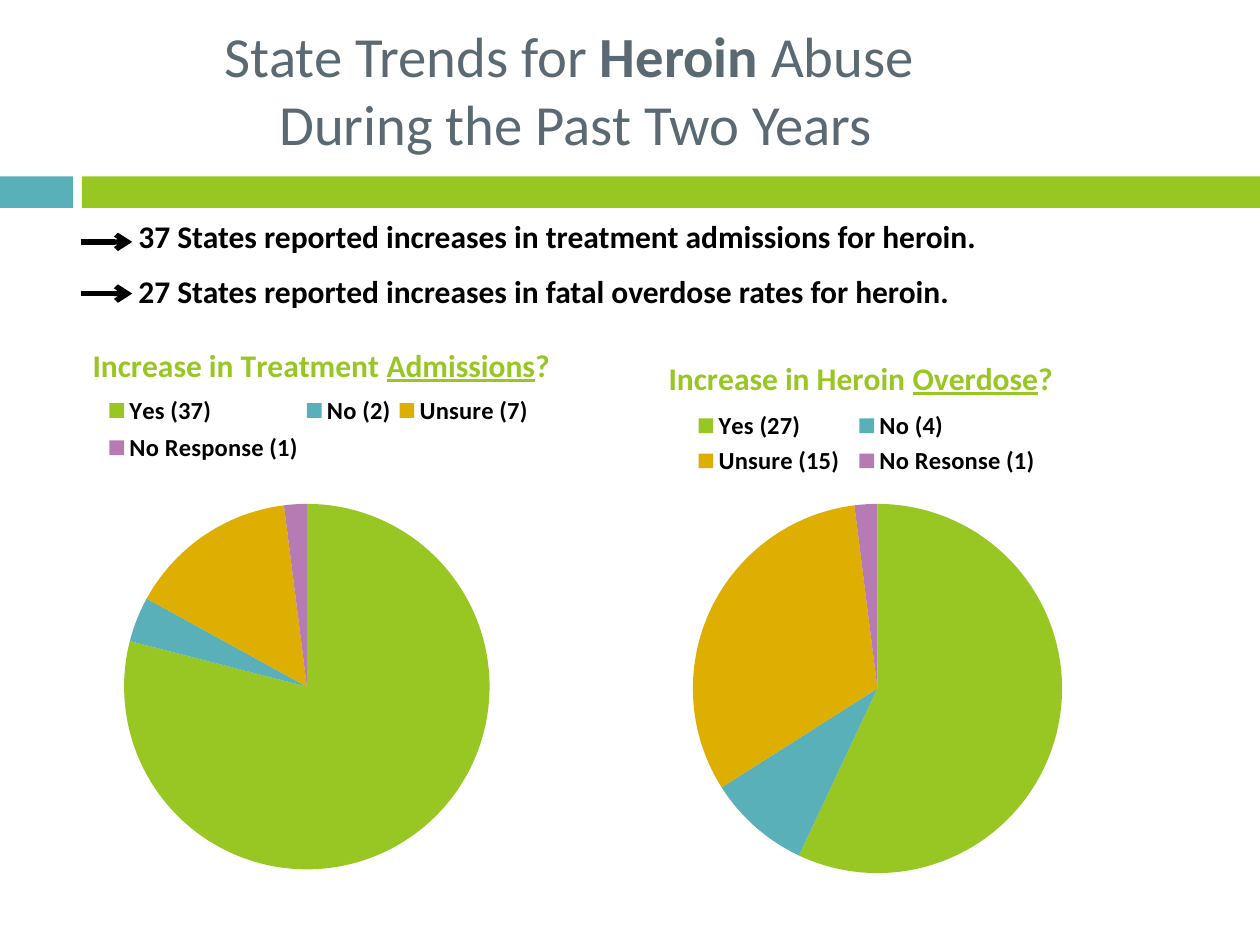
from dataclasses import dataclass

from lxml.etree import SubElement
from pptx import Presentation
from pptx.chart.data import CategoryChartData
from pptx.dml.color import RGBColor
from pptx.enum.chart import XL_CHART_TYPE, XL_LEGEND_POSITION
from pptx.enum.shapes import MSO_CONNECTOR, MSO_SHAPE
from pptx.enum.text import MSO_ANCHOR, MSO_AUTO_SIZE, PP_ALIGN
from pptx.oxml import parse_xml
from pptx.oxml.ns import nsdecls, qn
from pptx.util import Inches, Pt


@dataclass(frozen=True)
class Theme:
    font: str = "Calibri"
    slate: str = "5B6973"
    black: str = "000000"
    green: str = "98C723"
    teal: str = "59B0B9"
    gold: str = "DEAE00"
    purple: str = "B77BB4"
    title: float = 32.4
    body: float = 18
    legend: float = 14
    gap: float = 10
    arrow: float = 3


class SlideBuilder:
    def __init__(self, prs, theme):
        self.theme = theme
        self.s = prs.slides.add_slide(prs.slide_layouts[5])

    def style(self, font, size, color, bold=False, underline=None):
        font.name = self.theme.font
        font.size = Pt(size)
        font.bold = bold
        font.underline = underline
        font.color.rgb = RGBColor.from_string(color)

    def run(self, p, text, size, color, bold=False, underline=None):
        r = p.add_run()
        r.text = text
        self.style(r.font, size, color, bold, underline)

    def title(self, lines, x, y, w, h):
        sp = self.s.shapes.title
        sp.left, sp.top, sp.width, sp.height = map(Inches, (x, y, w, h))
        tf = sp.text_frame
        tf.auto_size = MSO_AUTO_SIZE.NONE
        tf.vertical_anchor = MSO_ANCHOR.MIDDLE
        p = tf.paragraphs[0]
        p.alignment = PP_ALIGN.CENTER
        for i, line in enumerate(lines):
            if i:
                p.add_line_break()
            for text, bold in line:
                self.run(p, text, self.theme.title, self.theme.slate, bold)

    def bar(self, color, x, y, w, h):
        sp = self.s.shapes.add_shape(MSO_SHAPE.RECTANGLE, *map(Inches, (x, y, w, h)))
        sp.shadow.inherit = False
        sp.fill.solid()
        sp.fill.fore_color.rgb = RGBColor.from_string(color)
        sp.line.fill.background()

    def text(self, lines, x, y, w, h):
        tf = self.s.shapes.add_textbox(*map(Inches, (x, y, w, h))).text_frame
        tf.word_wrap = True
        for i, line in enumerate(lines):
            p = tf.add_paragraph() if i else tf.paragraphs[0]
            p.space_before = Pt(self.theme.gap if i else 0)
            self.run(p, line, self.theme.body, self.theme.black, True)

    def arrow(self, x1, x2, y):
        cx = self.s.shapes.add_connector(
            MSO_CONNECTOR.STRAIGHT, Inches(x1), Inches(y), Inches(x2), Inches(y))
        cx.line.width = Pt(self.theme.arrow)
        cx.line.color.rgb = RGBColor.from_string(self.theme.black)
        SubElement(cx.line._get_or_add_ln(), qn("a:tailEnd"), type="arrow")
        SubElement(cx.element.spPr, qn("a:effectLst"))

    def layout(self, parent, index, x, y, w=None, h=None, inner=False):
        for old in parent.findall(qn("c:layout")):
            parent.remove(old)
        target = '<c:layoutTarget val="inner"/>' if inner else ""
        modes = '<c:xMode val="edge"/><c:yMode val="edge"/>'
        sizes = "".join(f'<c:{k} val="{v}"/>' for k, v in zip("xywh", (x, y, w, h))
                        if v is not None)
        parent.insert(index, parse_xml(
            f'<c:layout {nsdecls("c")}><c:manualLayout>{target}{modes}{sizes}'
            "</c:manualLayout></c:layout>"))

    def pie(self, box, topic, key, series, values, title_at, legend_at, plot_at):
        t = self.theme
        data = CategoryChartData()
        data.categories = list(values)
        data.add_series(series, list(values.values()))
        chart = self.s.shapes.add_chart(XL_CHART_TYPE.PIE, *map(Inches, box), data).chart
        self.style(chart.font, t.body, t.black)

        chart.has_title = True
        p = chart.chart_title.text_frame.paragraphs[0]
        for text, underline in ((f"Increase in {topic} ", None), (key, True), ("?", None)):
            self.run(p, text, t.body, t.green, True, underline)
        chart.chart_title.include_in_layout = False

        chart.has_legend = True
        chart.legend.position = XL_LEGEND_POSITION.TOP
        chart.legend.include_in_layout = False
        self.style(chart.legend.font, t.legend, t.black, True)

        plot = chart.plots[0]
        plot.vary_by_categories = True
        for i, color in enumerate((t.green, t.teal, t.gold, t.purple)):
            fill = plot.series[0].points[i].format.fill
            fill.solid()
            fill.fore_color.rgb = RGBColor.from_string(color)

        root = chart._chartSpace.chart
        self.layout(root.find(qn("c:title")), 1, *title_at)
        self.layout(root.find(qn("c:legend")), 1, *legend_at)
        self.layout(root.find(qn("c:plotArea")), 0, *plot_at, inner=True)


def main():
    prs = Presentation()
    prs.slide_width, prs.slide_height = Inches(10), Inches(7.5)
    theme = Theme()
    b = SlideBuilder(prs, theme)

    b.bar(theme.teal, 0, 1.4, 0.58, 0.25)
    b.bar(theme.green, 0.65, 1.4, 9.35, 0.25)
    b.title([[("State Trends for ", False), ("Heroin", True), (" Abuse ", False)],
             [("During the Past Two Years", False)]], 0.07, 0.08, 9, 1.25)

    b.pie((0.33, 2.33, 4.68, 5.38), "Treatment", "Admissions", "Series 1",
          {"Yes (37)": 79, "No (2)": 4, "Unsure (7)": 15, "No Response (1)": 2},
          (0.08, 0.07), (0.1, 0.14, 0.74, 0.12), (0.14, 0.31, 0.62, 0.54))
    b.pie((4.67, 2.58, 4.33, 4.58), "Heroin", "Overdose", "Increase in Heroin Overdose?",
          {"Yes (27)": 57, "No (4)": 9, "Unsure (15)": 32, "No Resonse (1)": 2},
          (0.14, 0.05), (0.18, 0.14, 0.66, 0.13), (0.19, 0.31, 0.68, 0.64))

    b.text(["37 States reported increases in treatment admissions for heroin.",
            "27 States reported increases in fatal overdose rates for heroin."],
           1, 1.67, 8.67, 0.84)
    for y in (1.92, 2.33):
        b.arrow(0.64, 1.05, y)

    prs.save("out.pptx")


if __name__ == "__main__":
    main()
